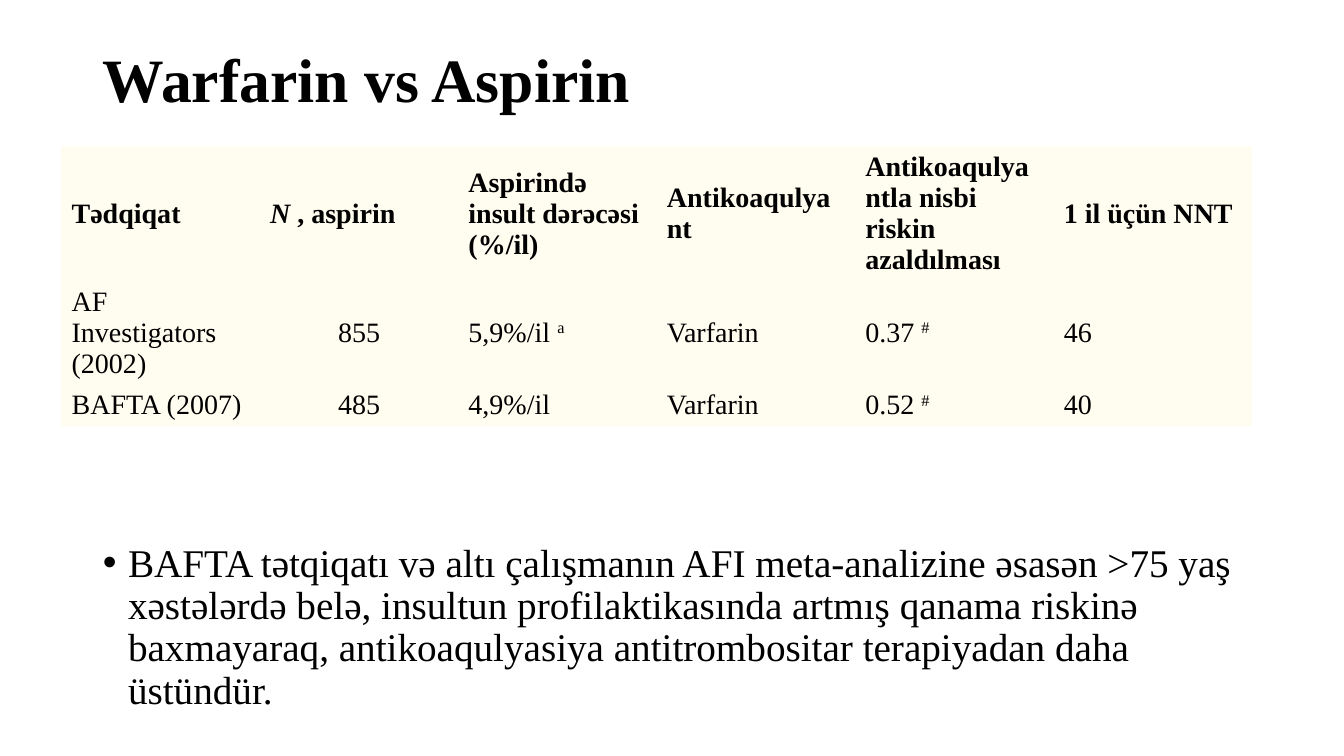
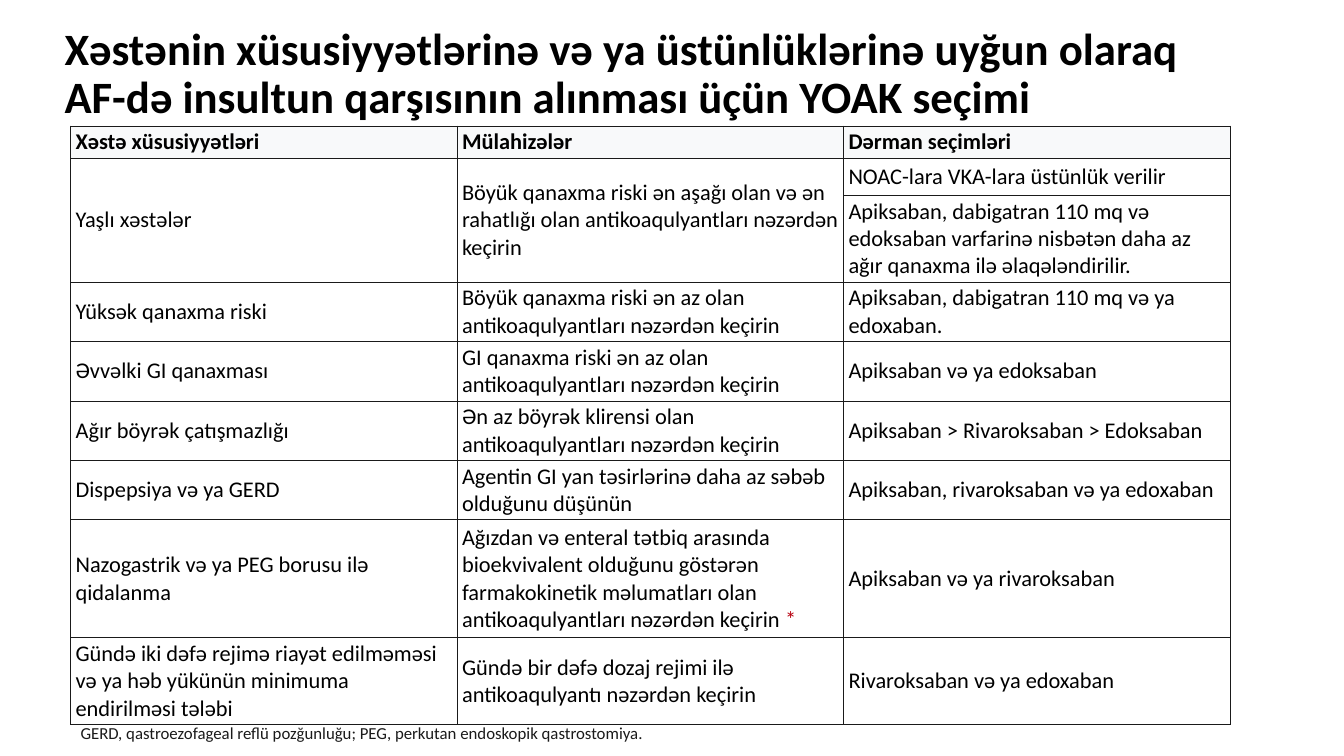
from lxml import etree
from pptx import Presentation
from pptx.dml.color import RGBColor
from pptx.enum import text
from pptx.oxml import ns
from pptx.util import Pt

# Lengths are px, 100 to the inch
EMU_PER_PX = 9144
COLORS = {"ink": "000000", "grid": "1A1A1A", "accent": "B7000F",
          "cream": "FFFCF0", "head": "F8F9FA", "white": "FFFFFF"}
SERIF, SANS = "Times New Roman", "Calibri"
PLAIN_TABLE = "{2D5ABB26-0587-4C30-8999-92F81FD0307C}"
TITLE_AND_CONTENT, TITLE_ONLY = 1, 5
SUPER = {"raised": True}

# Content: a cell is a string or a list of (text, style) runs; None is merged upwards
ASPIRIN_TITLE = "Warfarin vs Aspirin"
ASPIRIN_ROWS = [
    ["Tədqiqat", [("N", {"italic": True}), (" , aspirin", {})],
     "Aspirində insult dərəcəsi (%/il)", "Antikoaqulyant",
     "Antikoaqulyantla nisbi riskin azaldılması", "1 il üçün NNT"],
    ["AF Investigators (2002)", "855", [("5,9%/il ", {}), ("a", SUPER)],
     "Varfarin", [("0.37 ", {}), ("#", SUPER)], "46"],
    ["BAFTA (2007)", "485", "4,9%/il",
     "Varfarin", [("0.52 ", {}), ("#", SUPER)], "40"],
]
ASPIRIN_HEIGHTS = [134, 102, 41]
ASPIRIN_BULLET = (
    "BAFTA tətqiqatı və altı çalışmanın AFI meta-analizine əsasən >75 yaş "
    "xəstələrdə belə, insultun profilaktikasında artmış qanama riskinə "
    "baxmayaraq, antikoaqulyasiya antitrombositar terapiyadan daha üstündür.")

CHOICE_TITLE = ("Xəstənin xüsusiyyətlərinə və ya üstünlüklərinə uyğun olaraq "
                "AF-də insultun qarşısının alınması üçün YOAK seçimi")
CHOICE_ROWS = [
    ["Xəstə xüsusiyyətləri", "Mülahizələr", "Dərman seçimləri"],
    ["Yaşlı xəstələr",
     "Böyük qanaxma riski ən aşağı olan və ən rahatlığı olan "
     "antikoaqulyantları nəzərdən keçirin",
     "NOAC-lara VKA-lara üstünlük verilir"],
    [None, None,
     "Apiksaban, dabigatran 110 mq və edoksaban varfarinə nisbətən daha az "
     "ağır qanaxma ilə əlaqələndirilir."],
    ["Yüksək qanaxma riski",
     "Böyük qanaxma riski ən az olan antikoaqulyantları nəzərdən keçirin",
     "Apiksaban, dabigatran 110 mq və ya edoxaban."],
    ["Əvvəlki GI qanaxması",
     "GI qanaxma riski ən az olan antikoaqulyantları nəzərdən keçirin",
     "Apiksaban və ya edoksaban"],
    ["Ağır böyrək çatışmazlığı",
     "Ən az böyrək klirensi olan antikoaqulyantları nəzərdən keçirin",
     "Apiksaban > Rivaroksaban > Edoksaban"],
    ["Dispepsiya və ya GERD",
     "Agentin GI yan təsirlərinə daha az səbəb olduğunu düşünün",
     "Apiksaban, rivaroksaban və ya edoxaban"],
    ["Nazogastrik və ya PEG borusu ilə qidalanma",
     [("Ağızdan və enteral tətbiq arasında bioekvivalent olduğunu göstərən "
       "farmakokinetik məlumatları olan antikoaqulyantları nəzərdən keçirin ", {}),
      ("*", {"color": "accent"})],
     "Apiksaban və ya rivaroksaban"],
    ["Gündə iki dəfə rejimə riayət edilməməsi və ya həb yükünün minimuma "
     "endirilməsi tələbi",
     "Gündə bir dəfə dozaj rejimi ilə antikoaqulyantı nəzərdən keçirin",
     "Rivaroksaban və ya edoxaban"],
]
CHOICE_HEIGHTS = [32, 37, 86, 59, 59, 59, 59, 117, 86]
CHOICE_NOTE = ("GERD, qastroezofageal reflü pozğunluğu; "
               "PEG, perkutan endoskopik qastrostomiya.")


def px(length):
    return length * EMU_PER_PX


def place(shape, area):
    shape.left, shape.top, shape.width, shape.height = map(px, area)


def write(para, content, font, size, bold=False, color="ink"):
    runs = [(content, {})] if isinstance(content, str) else content
    for words, style in runs:
        span = para.add_run()
        span.text = words
        span.font.name, span.font.size, span.font.bold = font, Pt(size), bold
        span.font.italic = style.get("italic", False)
        span.font.color.rgb = RGBColor.from_string(COLORS[style.get("color", color)])
        if style.get("raised"):
            span._r.get_or_add_rPr().set("baseline", "30000")


def add_page(deck, layout, title, area, font, size):
    page = deck.slides.add_slide(deck.slide_layouts[layout])
    box = page.shapes.title
    place(box, area)
    frame = box.text_frame
    frame.auto_size = text.MSO_AUTO_SIZE.NONE
    frame.vertical_anchor = text.MSO_ANCHOR.MIDDLE
    para = frame.paragraphs[0]
    para.alignment, para.line_spacing = text.PP_ALIGN.LEFT, 0.9
    write(para, title, font, size, bold=True)
    return page


def add_borders(cell, color, width):
    properties = cell._tc.get_or_add_tcPr()
    for side in ("a:lnL", "a:lnR", "a:lnT", "a:lnB"):
        line = etree.SubElement(properties, ns.qn(side), w=str(Pt(width)))
        fill = etree.SubElement(line, ns.qn("a:solidFill"))
        etree.SubElement(fill, ns.qn("a:srgbClr"), val=COLORS[color])


def add_grid(page, rows, heights, area, font, size, head_fill, body_fill,
             insets=(10, 5), border=None, centred=()):
    left, top, width = area
    columns = len(rows[0])
    table = page.shapes.add_table(len(rows), columns, px(left), px(top),
                                  px(width), px(sum(heights))).table
    table.first_row = table.horz_banding = False
    table._tbl.tblPr.find(ns.qn("a:tableStyleId")).text = PLAIN_TABLE
    for column in table.columns:
        column.width = px(width) // columns
    for r, (row, height) in enumerate(zip(rows, heights)):
        table.rows[r].height = px(height)
        for c, content in enumerate(row):
            cell = table.cell(r, c)
            cell.margin_left = cell.margin_right = px(insets[0])
            cell.margin_top = cell.margin_bottom = px(insets[1])
            cell.vertical_anchor = text.MSO_ANCHOR.MIDDLE
            if border:
                add_borders(cell, border, 0.75)
            cell.fill.solid()
            cell.fill.fore_color.rgb = RGBColor.from_string(
                COLORS[body_fill if r else head_fill])
            if content is None:
                table.cell(r - 1, c).merge(cell)
                continue
            para = cell.text_frame.paragraphs[0]
            if r and c in centred:
                para.alignment = text.PP_ALIGN.CENTER
            write(para, content, font, size, bold=r == 0)


def build_aspirin(deck):
    page = add_page(deck, TITLE_AND_CONTENT, ASPIRIN_TITLE,
                    (92, 9, 1150, 145), SERIF, 44)
    # Conclusion under the table
    box = page.placeholders[1]
    place(box, (92, 470, 1150, 236))
    frame = box.text_frame
    frame.auto_size = text.MSO_AUTO_SIZE.NONE
    frame.margin_top, frame.margin_bottom = px(69), 0
    para = frame.paragraphs[0]
    para.line_spacing, para.space_before = 0.9, Pt(0)
    indent = para._p.get_or_add_pPr()
    indent.set("marL", str(px(25)))
    indent.set("indent", str(px(-25)))
    write(para, ASPIRIN_BULLET, SERIF, 28)
    # Trial results
    add_grid(page, ASPIRIN_ROWS, ASPIRIN_HEIGHTS, (61, 145, 1181), SERIF, 20,
             "cream", "cream", centred=(1,))


def build_choice(deck):
    page = add_page(deck, TITLE_ONLY, CHOICE_TITLE, (54, 24, 1150, 101), SANS, 32)
    # Drug choice by patient
    add_grid(page, CHOICE_ROWS, CHOICE_HEIGHTS, (70, 125, 1150), SANS, 16,
             "head", "white", insets=(5, 2), border="grid")
    # Abbreviations
    box = page.shapes.add_textbox(*map(px, (70, 712, 871, 30)))
    box.text_frame.word_wrap = True
    write(box.text_frame.paragraphs[0], CHOICE_NOTE, SANS, 12, color="grid")


def main():
    deck = Presentation()
    deck.slide_width, deck.slide_height = px(1333), px(750)
    build_aspirin(deck)
    build_choice(deck)
    deck.save("out.pptx")


if __name__ == "__main__":
    main()
